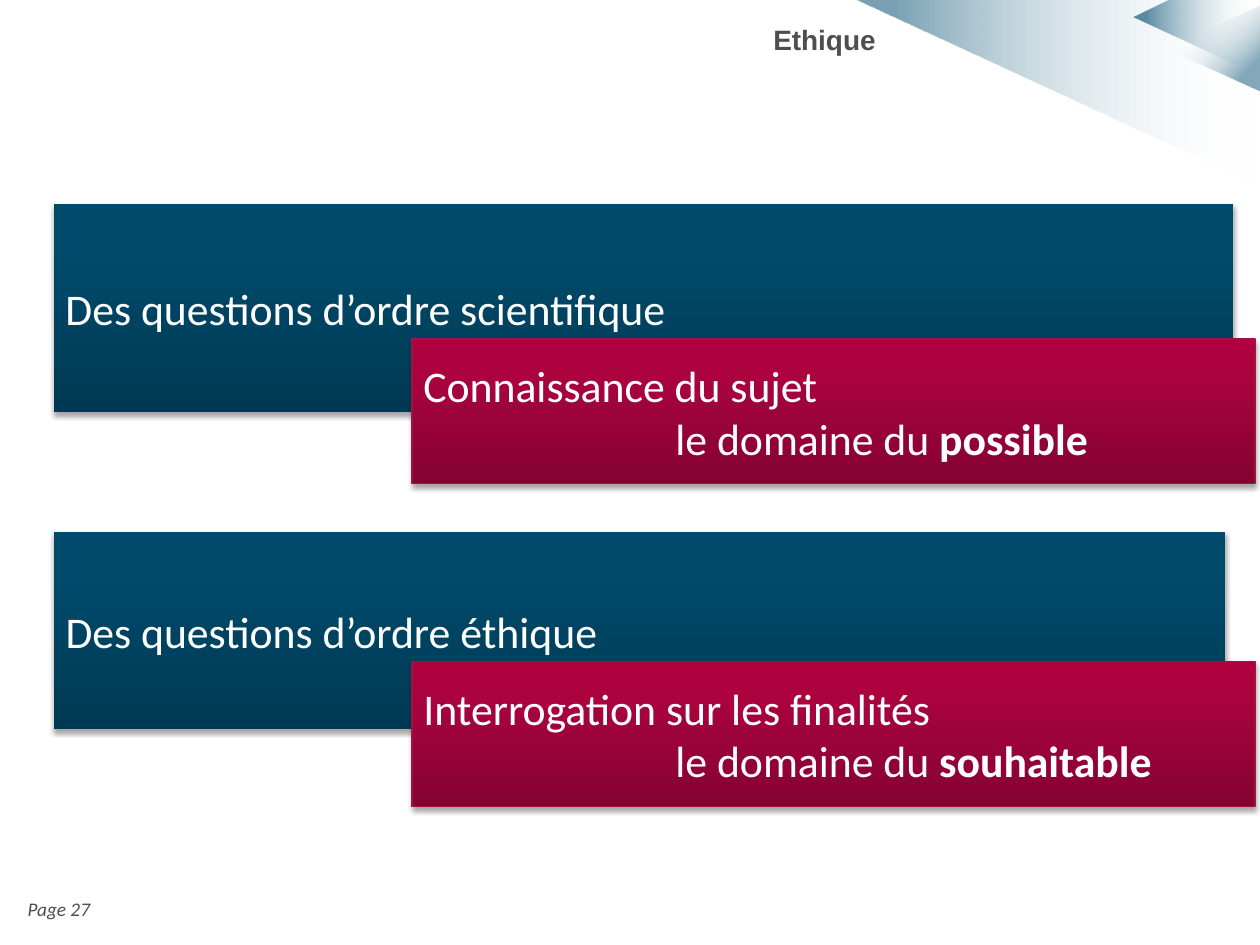
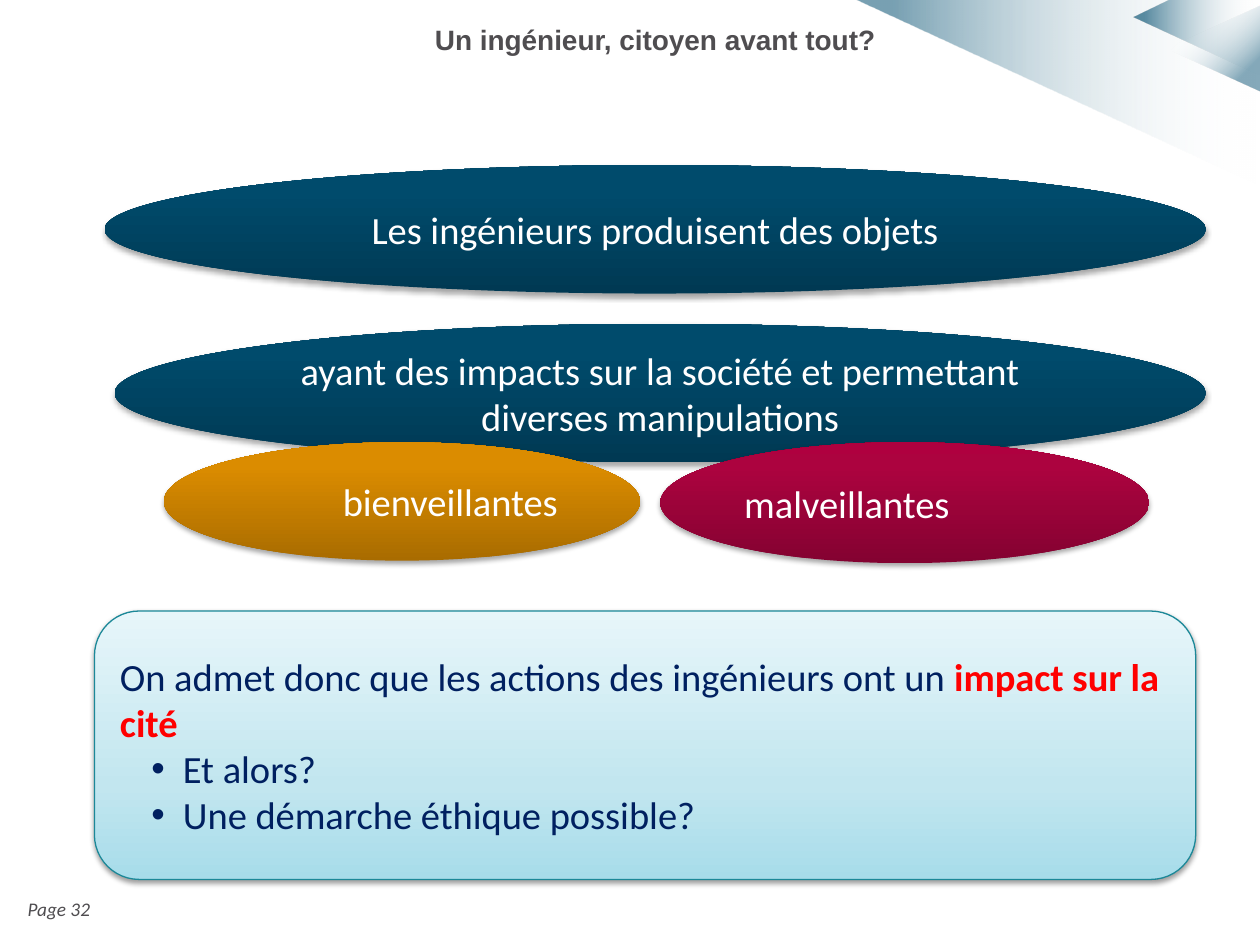
from lxml.etree import SubElement
from pptx import Presentation
from pptx.dml.color import RGBColor
from pptx.enum.shapes import MSO_SHAPE
from pptx.enum.text import MSO_ANCHOR, MSO_AUTO_SIZE, PP_ALIGN
from pptx.oxml.ns import qn
from pptx.util import Inches, Pt

COLOURS = {"white": "FFFFFF", "grey": "4F4D50", "navy": "002060", "red": "FF0000",
           "petrol": "004D6F", "raspberry edge": "9D1345", "ice edge": "1C8898"}

# Gradient stops: position in percent, colour, opacity in percent
GRADIENTS = {
    "blue": [(0, "003953", 100), (80, "004B6C", 100), (100, "004B6C", 100)],
    "raspberry": [(0, "840231", 100), (80, "AC033F", 100), (100, "AF003F", 100)],
    "amber": [(0, "A96C00", 100), (80, "DB8C00", 100), (100, "DC8D00", 100)],
    "ice": [(0, "A7DCEA", 100), (35, "C2E6EF", 100), (100, "E7F6FA", 100)],
}
UPWARD, LEFTWARD, DIAGONAL = 270, 180, 135

# Corner wedges: outline in inches, opacity of the petrol end
WEDGES = [
    ([(9.99, 1.47), (6.79, 0), (10, 0)], 53),
    ([(10, 0.6), (9, 0.14), (9.29, 0), (10, 0)], 63),
]

# Each question: place of the band, its text, top of the answer, answer lines
QUESTIONS = [
    ((0.43, 1.62, 9.36, 1.65), "Des questions d’ordre scientifique",
     2.69, "Connaissance du sujet", "possible"),
    ((0.43, 4.22, 9.29, 1.57), "Des questions d’ordre éthique",
     5.25, "Interrogation sur les finalités", "souhaitable"),
]
ANSWER_LEFT, ANSWER_WIDTH, ANSWER_HEIGHT = 3.27, 6.69, 1.15

CONCLUSION = ("On admet donc que les actions des ingénieurs ont un ", "impact sur la cité")
CONCLUSION_POINTS = ["Et alors?", "Une démarche éthique possible?"]
ELLIPSES = [
    ((0.83, 1.31, 8.74, 1.02), "blue", PP_ALIGN.CENTER,
     "Les ingénieurs produisent des objets"),
    ((0.91, 2.57, 8.66, 1.1), "blue", PP_ALIGN.CENTER,
     "ayant des impacts sur la société et permettant diverses manipulations"),
    ((1.3, 3.51, 3.78, 0.94), "amber", PP_ALIGN.RIGHT, "bienveillantes"),
    ((5.24, 3.51, 3.88, 0.96), "raspberry", PP_ALIGN.LEFT, "malveillantes"),
]


def add_colour(parent, colour, opacity):
    node = SubElement(parent, qn("a:srgbClr"), val=colour)
    if opacity < 100:
        SubElement(node, qn("a:alpha"), val=str(opacity * 1000))


def fill_gradient(shape, stops, angle):
    """Fill with any number of stops, at a clockwise angle that turns with the shape."""
    shape.fill.gradient()
    gradient = shape._element.spPr.find(qn("a:gradFill"))
    for child in list(gradient):
        gradient.remove(child)
    gradient.set("rotWithShape", "1")
    stop_list = SubElement(gradient, qn("a:gsLst"))
    for position, colour, opacity in stops:
        stop = SubElement(stop_list, qn("a:gs"), pos=str(position * 1000))
        add_colour(stop, colour, opacity)
    SubElement(gradient, qn("a:lin"), ang=str(angle * 60000), scaled="0")


def style_shape(shape, stops, angle, edge=None):
    fill_gradient(shape, stops, angle)
    if edge:
        shape.line.color.rgb = RGBColor.from_string(COLOURS[edge])
        shape.line.width = Pt(0.75)
    else:
        shape.line.fill.background()
    shape.shadow.inherit = False


def add_shadow(shape, opacity, distance):
    effects = shape._element.spPr.find(qn("a:effectLst"))
    shadow = SubElement(effects, qn("a:outerShdw"), blurRad=str(Pt(3.1)),
                        dist=str(Pt(distance)), dir="5400000", rotWithShape="0")
    add_colour(shadow, "000000", opacity)


def add_panel(page, kind, place, gradient, edge=None, shadow=(35, 1.8)):
    panel = page.shapes.add_shape(kind, *map(Inches, place))
    style_shape(panel, GRADIENTS[gradient], UPWARD, edge)
    add_shadow(panel, *shadow)
    frame = panel.text_frame
    frame.word_wrap = True
    frame.vertical_anchor = MSO_ANCHOR.MIDDLE
    return frame


def add_span(para, text, size, colour="white", bold=False, italic=False, face="Calibri"):
    span = para.add_run()
    span.text = text
    font = span.font
    font.name, font.size, font.bold, font.italic = face, Pt(size), bold, italic
    font.color.rgb = RGBColor.from_string(COLOURS[colour])


def indent(para, left, first=0):
    properties = para._p.get_or_add_pPr()
    properties.set("marL", str(Inches(left)))
    properties.set("indent", str(Inches(first)))
    return properties


def add_corner(page):
    for outline, opacity in WEDGES:
        points = [(Inches(x), Inches(y)) for x, y in outline]
        builder = page.shapes.build_freeform(*points[0])
        builder.add_line_segments(points[1:], close=True)
        stops = [(1, COLOURS["white"], 0), (91, COLOURS["petrol"], opacity)]
        style_shape(builder.convert_to_shape(), stops, LEFTWARD)
    place = map(Inches, (9.29, 0.01, 0.68, 0.75))
    triangle = page.shapes.add_shape(MSO_SHAPE.ISOSCELES_TRIANGLE, *place)
    triangle.rotation = 270
    stops = [(27, COLOURS["white"], 0), (81, COLOURS["petrol"], 48)]
    style_shape(triangle, stops, DIAGONAL)


def add_page(deck, title, number):
    """Add a slide with the shared corner, title and page number."""
    page = deck.slides.add_slide(deck.slide_layouts[5])
    add_corner(page)
    heading = page.shapes.title
    heading.left, heading.top, heading.width, heading.height = map(
        Inches, (2.01, 0.13, 5.04, 0.46))
    frame = heading.text_frame
    frame.auto_size = MSO_AUTO_SIZE.NONE
    frame.vertical_anchor = MSO_ANCHOR.TOP
    para = frame.paragraphs[0]
    para.alignment = PP_ALIGN.RIGHT
    add_span(para, title, 16, "grey", bold=True, face="Arial")

    footer = page.shapes.add_textbox(*map(Inches, (0.12, 7.07, 2.68, 0.29)))
    footer.text_frame.word_wrap = True
    add_span(footer.text_frame.paragraphs[0], f"Page {number}", 11, "grey", italic=True)
    return page


def add_question(page, place, question, answer_top, knowledge, domain):
    band = add_panel(page, MSO_SHAPE.RECTANGLE, place, "blue")
    answer_place = (ANSWER_LEFT, answer_top, ANSWER_WIDTH, ANSWER_HEIGHT)
    answer = add_panel(page, MSO_SHAPE.RECTANGLE, answer_place, "raspberry", "raspberry edge")
    for frame, text in ((band, question), (answer, knowledge)):
        frame.margin_left = frame.margin_right = Inches(0.09)
        add_span(frame.paragraphs[0], text, 25)
    para = answer.add_paragraph()
    indent(para, 2)
    add_span(para, "le domaine du ", 25)
    add_span(para, domain, 25, bold=True)
    for para in (*band.paragraphs, *answer.paragraphs):
        para.alignment = PP_ALIGN.JUSTIFY


def add_conclusion(page):
    frame = add_panel(page, MSO_SHAPE.ROUNDED_RECTANGLE, (0.75, 4.85, 8.74, 2.13),
                      "ice", "ice edge", shadow=(38, 1.6))
    statement, stress = CONCLUSION
    para = frame.paragraphs[0]
    add_span(para, statement, 22, "navy")
    add_span(para, stress, 22, "red", bold=True)
    for point in CONCLUSION_POINTS:
        para = frame.add_paragraph()
        properties = indent(para, 0.5, -0.25)
        SubElement(properties, qn("a:buFont"), typeface="Arial")
        SubElement(properties, qn("a:buChar"), char="•")
        add_span(para, point, 22, "navy")
    for para in frame.paragraphs:
        para.alignment = PP_ALIGN.LEFT


def main():
    deck = Presentation()
    deck.slide_width, deck.slide_height = Inches(10), Inches(7.5)

    ethics = add_page(deck, "Ethique", 27)
    for question in QUESTIONS:
        add_question(ethics, *question)

    citizen = add_page(deck, "Un ingénieur, citoyen avant tout?", 32)
    add_conclusion(citizen)
    for place, gradient, alignment, text in ELLIPSES:
        para = add_panel(citizen, MSO_SHAPE.OVAL, place, gradient).paragraphs[0]
        para.alignment = alignment
        add_span(para, text, 22)

    deck.save("out.pptx")


if __name__ == "__main__":
    main()
